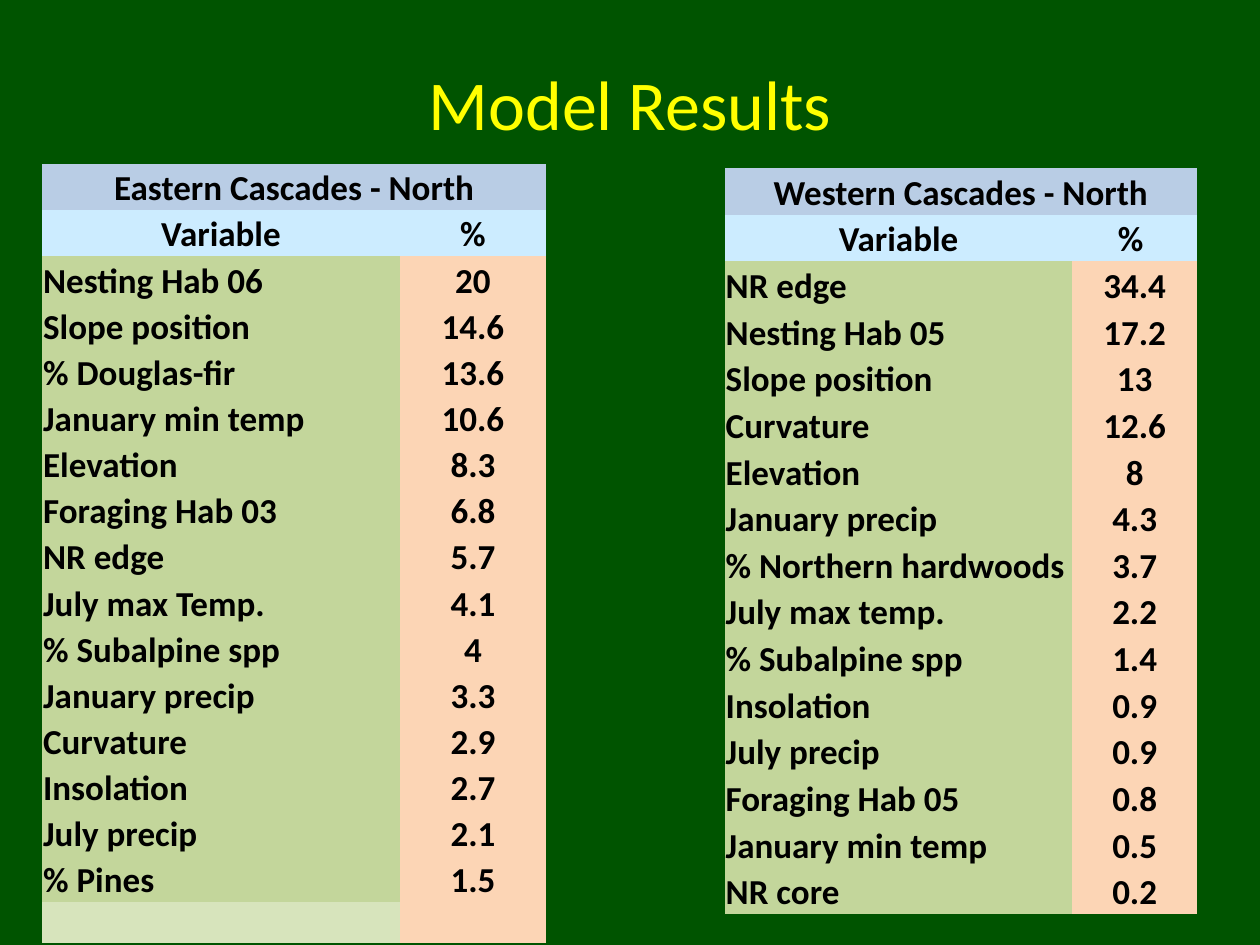
from pptx import Presentation
from pptx.dml.color import RGBColor
from pptx.enum.text import MSO_ANCHOR as Anchor, PP_ALIGN as Align
from pptx.util import Cm, Pt

COLORS = {
    "background": "005400",
    "title": "FFFF00",
    "text": "000000",
    "region": "B9CDE5",
    "heading": "CCECFF",
    "variable": "C3D69B",
    "percent": "FCD5B5",
    "blank": "D7E4BC",
}
NO_STYLE_NO_GRID = "{2D5ABB26-0587-4C30-8999-92F81FD0307C}"

EASTERN = [
    ("Nesting Hab 06", "20"),
    ("Slope position", "14.6"),
    ("% Douglas-fir", "13.6"),
    ("January min temp", "10.6"),
    ("Elevation", "8.3"),
    ("Foraging Hab 03", "6.8"),
    ("NR edge", "5.7"),
    ("July max Temp.", "4.1"),
    ("% Subalpine spp", "4"),
    ("January precip", "3.3"),
    ("Curvature", "2.9"),
    ("Insolation", "2.7"),
    ("July precip", "2.1"),
    ("% Pines", "1.5"),
    ("", ""),
]
WESTERN = [
    ("NR edge", "34.4"),
    ("Nesting Hab 05", "17.2"),
    ("Slope position", "13"),
    ("Curvature", "12.6"),
    ("Elevation", "8"),
    ("January precip", "4.3"),
    ("% Northern hardwoods", "3.7"),
    ("July max temp.", "2.2"),
    ("% Subalpine spp", "1.4"),
    ("Insolation", "0.9"),
    ("July precip", "0.9"),
    ("Foraging Hab 05", "0.8"),
    ("January min temp", "0.5"),
    ("NR core", "0.2"),
]


def color(name):
    return RGBColor.from_string(COLORS[name])


def write_text(frame, text, *, size=20, bold=True, ink="text", align=Align.CENTER):
    paragraph = frame.paragraphs[0]
    paragraph.alignment = align
    run = paragraph.add_run()
    run.text = text
    run.font.name = "Calibri"
    run.font.size = Pt(size)
    run.font.bold = bold
    run.font.color.rgb = color(ink)


def fill_cell(cell, text, fill, align=Align.CENTER):
    cell.fill.solid()
    cell.fill.fore_color.rgb = color(fill)
    cell.vertical_anchor = Anchor.BOTTOM
    cell.margin_left = cell.margin_right = cell.margin_top = Cm(0.02)
    cell.margin_bottom = 0
    if text:
        write_text(cell.text_frame, text, align=align)


def add_title(slide, text):
    title = slide.shapes.title
    title.left, title.top = Cm(1.27), Cm(0.76)
    title.width, title.height = Cm(22.86), Cm(2.62)
    title.text_frame.vertical_anchor = Anchor.MIDDLE
    write_text(title.text_frame, text, size=40, bold=False, ink="title")


def add_region_table(slide, region, percent_label, results, *, left, top, widths, row_height):
    row_count = len(results) + 2
    frame = slide.shapes.add_table(row_count, 2, Cm(left), Cm(top),
                                   Cm(sum(widths)), Cm(row_height * row_count))
    table = frame.table
    table.first_row = table.horz_banding = False
    table._tbl.tblPr.find("{*}tableStyleId").text = NO_STYLE_NO_GRID
    for column, width in zip(table.columns, widths):
        column.width = Cm(width)
    for row in table.rows:
        row.height = Cm(row_height)

    # Region name across both columns, then the column headings
    table.cell(0, 0).merge(table.cell(0, 1))
    fill_cell(table.cell(0, 0), region, "region")
    fill_cell(table.cell(1, 0), "Variable", "heading")
    fill_cell(table.cell(1, 1), percent_label, "heading")

    # One row per variable
    for index, (variable, percent) in enumerate(results, start=2):
        fill_cell(table.cell(index, 0), variable,
                  "variable" if variable else "blank", Align.LEFT)
        fill_cell(table.cell(index, 1), percent, "percent")
    return table


def main():
    deck = Presentation()
    deck.slide_width, deck.slide_height = Cm(25.4), Cm(19.05)
    slide = deck.slides.add_slide(deck.slide_layouts[5])
    slide.background.fill.solid()
    slide.background.fill.fore_color.rgb = color("background")

    add_title(slide, "Model Results")
    eastern = add_region_table(slide, "Eastern Cascades - North", "%", EASTERN,
                               left=0.85, top=3.31, widths=(7.21, 2.95), row_height=0.93)
    # The closing blank row is shorter
    eastern.rows[len(EASTERN) + 1].height = Cm(0.82)
    add_region_table(slide, "Western Cascades - North", "% ", WESTERN,
                     left=14.61, top=3.39, widths=(7.01, 2.51), row_height=0.94)

    deck.save("out.pptx")


if __name__ == "__main__":
    main()
